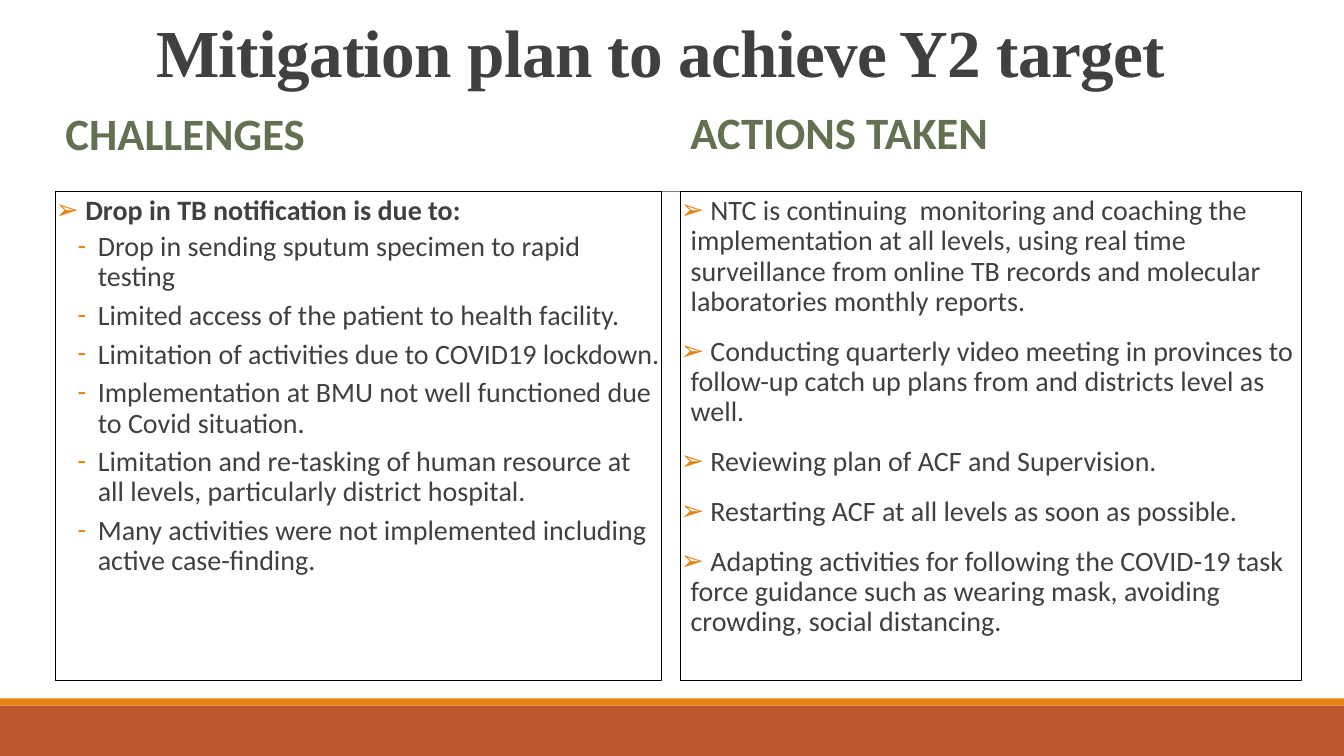
from dataclasses import dataclass

from lxml.etree import SubElement
from pptx import Presentation
from pptx.dml.color import RGBColor
from pptx.enum.shapes import MSO_CONNECTOR, MSO_SHAPE
from pptx.enum.text import MSO_ANCHOR as Anchor, PP_ALIGN as Align
from pptx.oxml.ns import qn
from pptx.util import Inches, Pt

RUST = RGBColor(0xBD, 0x58, 0x2C)
ORANGE = RGBColor(0xE4, 0x83, 0x12)
GREY = RGBColor(0x80, 0x80, 0x80)
CHARCOAL = RGBColor(0x40, 0x40, 0x40)
GREEN = RGBColor(0x63, 0x70, 0x52)
BLACK = RGBColor(0, 0, 0)

PANEL_TOP = 1.9
PANEL_HEIGHT = 4.85


@dataclass(frozen=True)
class Style:
    size: int
    color: RGBColor
    bold: bool = False
    font: str = "Calibri"
    line_spacing: float = 0.9
    before: int = 12
    after: int = 2
    bullet: str = ""
    indent: float = 0
    hanging: float = 0
    level: int = 0


@dataclass(frozen=True)
class Band:
    top: float
    height: float
    color: RGBColor


@dataclass(frozen=True)
class Column:
    left: float
    width: float
    heading: str
    heading_top: float
    heading_height: float
    heading_anchor: Anchor
    items: list[tuple[str, Style]]


TITLE = Style(48, CHARCOAL, True, "Times New Roman", 0.85, 0, 0)
HEADING = Style(32, GREEN, True)
POINT = Style(20, CHARCOAL, bullet="➢", indent=0.1, hanging=0.1)
LEAD = Style(20, CHARCOAL, True, bullet="➢", indent=0.1, hanging=0.1)
DASH = Style(20, CHARCOAL, before=2, after=4, bullet="-", indent=0.42,
             hanging=0.2, level=1)

BANDS = [Band(7, 0.5, RUST), Band(6.93, 0.07, ORANGE)]

CHALLENGES = [
    "Drop in sending sputum specimen to rapid testing",
    "Limited access of the patient to health facility.",
    "Limitation of activities due to COVID19 lockdown.",
    "Implementation at BMU not well functioned due to Covid situation.",
    "Limitation and re-tasking of human resource at all levels, "
    "particularly district hospital.",
    "Many activities were not implemented including active case-finding.",
]
ACTIONS = [
    " NTC is continuing  monitoring and coaching the implementation at all "
    "levels, using real time surveillance from online TB records and molecular "
    "laboratories monthly reports.",
    " Conducting quarterly video meeting in provinces to follow-up catch up "
    "plans from and districts level as well.",
    " Reviewing plan of ACF and Supervision.",
    " Restarting ACF at all levels as soon as possible.",
    " Adapting activities for following the COVID-19 task force guidance such "
    "as wearing mask, avoiding crowding, social distancing.",
]
COLUMNS = [
    Column(0.55, 6.01, "CHALLENGES", 1.06, 0.56, Anchor.TOP,
           [(" Drop in TB notification is due to:", LEAD)]
           + [(text, DASH) for text in CHALLENGES]),
    Column(6.75, 6.16, "ACTIONS TAKEN", 1.03, 0.62, Anchor.MIDDLE,
           [(text, POINT) for text in ACTIONS]),
]


def add_bullet(paragraph, style: Style) -> None:
    properties = paragraph._p.get_or_add_pPr()
    properties.set("marL", str(Inches(style.indent)))
    properties.set("indent", str(-Inches(style.hanging)))
    bullet_color = SubElement(properties, qn("a:buClr"))
    SubElement(bullet_color, qn("a:srgbClr"), val=str(ORANGE))
    SubElement(properties, qn("a:buFont"), typeface=style.font)
    SubElement(properties, qn("a:buChar"), char=style.bullet)


def write(paragraph, text: str, style: Style) -> None:
    paragraph.text = text
    paragraph.level = style.level
    paragraph.line_spacing = style.line_spacing
    paragraph.space_before = Pt(style.before)
    paragraph.space_after = Pt(style.after)
    if style.bullet:
        add_bullet(paragraph, style)
    font = paragraph.font
    font.name = style.font
    font.size = Pt(style.size)
    font.bold = style.bold
    font.color.rgb = style.color


def add_label(page, left: float, top: float, width: float, height: float,
              text: str, style: Style, anchor: Anchor):
    """Add a one-paragraph text box and return its paragraph."""
    box = page.shapes.add_textbox(
        Inches(left), Inches(top), Inches(width), Inches(height))
    box.text_frame.word_wrap = True
    box.text_frame.vertical_anchor = anchor
    paragraph = box.text_frame.paragraphs[0]
    write(paragraph, text, style)
    return paragraph


def add_rectangle(page, left: float, top: float, width: float, height: float):
    shape = page.shapes.add_shape(
        MSO_SHAPE.RECTANGLE,
        Inches(left), Inches(top), Inches(width), Inches(height))
    shape.shadow.inherit = False
    return shape


def add_band(page, band: Band) -> None:
    shape = add_rectangle(page, 0, band.top, 13.33, band.height)
    shape.fill.solid()
    shape.fill.fore_color.rgb = band.color
    shape.line.fill.background()


def add_rule(page) -> None:
    rule = page.shapes.add_connector(
        MSO_CONNECTOR.STRAIGHT,
        Inches(1.31), Inches(PANEL_TOP), Inches(12.21), Inches(PANEL_TOP))
    rule.line.color.rgb = GREY
    rule.line.width = Pt(0.5)
    SubElement(rule._element.spPr, qn("a:effectLst"))


def add_column(page, column: Column) -> None:
    add_label(page, column.left, column.heading_top, column.width,
              column.heading_height, column.heading, HEADING,
              column.heading_anchor)
    panel = add_rectangle(
        page, column.left, PANEL_TOP, column.width, PANEL_HEIGHT)
    panel.fill.background()
    panel.line.color.rgb = BLACK
    panel.line.width = Pt(0.75)
    frame = panel.text_frame
    frame.word_wrap = True
    frame.vertical_anchor = Anchor.TOP
    frame.margin_left = frame.margin_right = 0
    for index, (text, style) in enumerate(column.items):
        paragraph = frame.add_paragraph() if index else frame.paragraphs[0]
        paragraph.alignment = Align.LEFT
        write(paragraph, text, style)


def main() -> None:
    deck = Presentation()
    deck.slide_width, deck.slide_height = Inches(13.33), Inches(7.5)
    page = deck.slides.add_slide(deck.slide_layouts[6])
    for band in BANDS:
        add_band(page, band)
    add_rule(page)
    title = add_label(page, 0.19, 0.15, 12.72, 0.83,
                      "Mitigation plan to achieve Y2 target", TITLE,
                      Anchor.MIDDLE)
    title.alignment = Align.CENTER
    title.font._element.set("spc", "-50")
    for column in COLUMNS:
        add_column(page, column)
    deck.save("out.pptx")


if __name__ == "__main__":
    main()
